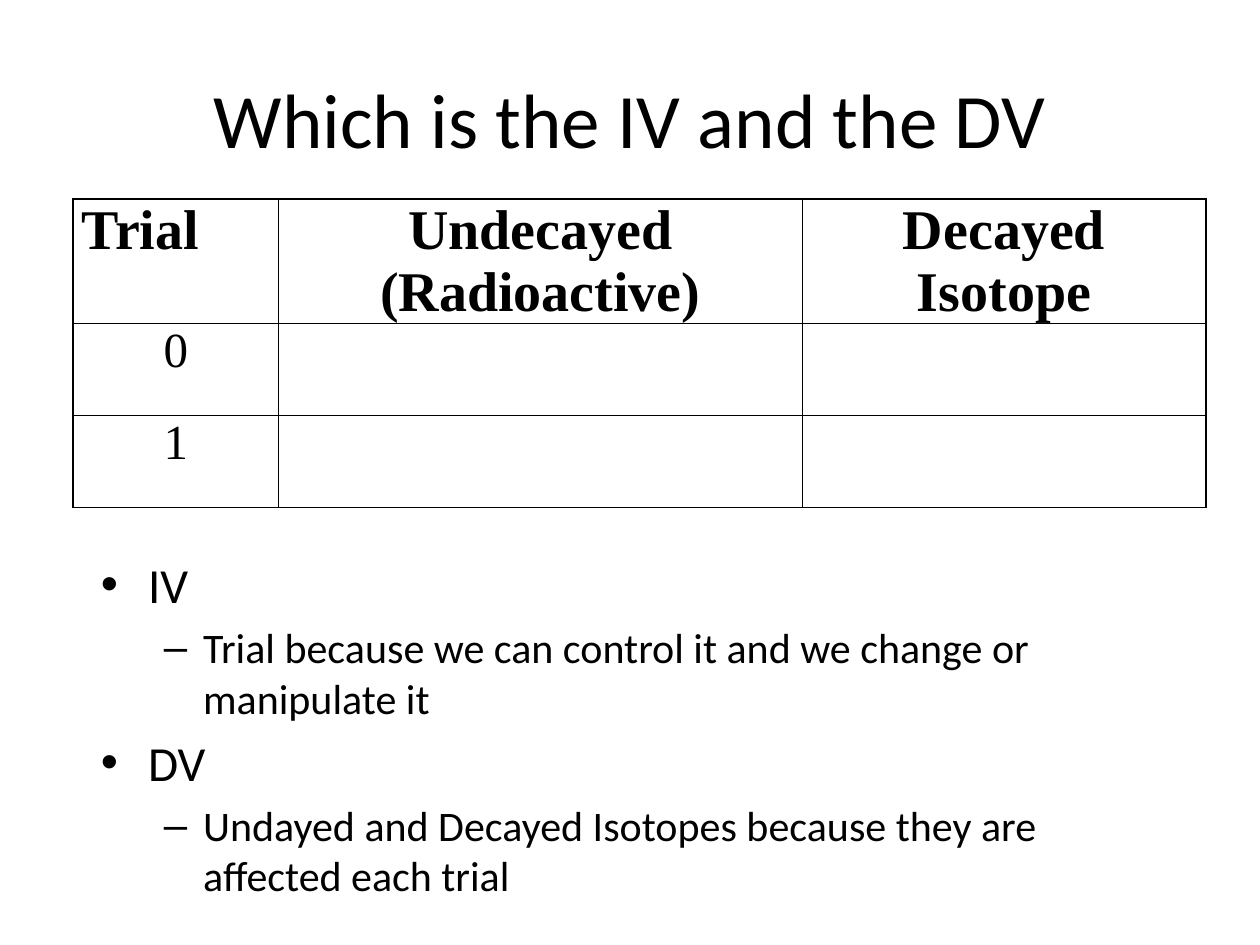
from dataclasses import dataclass

from lxml import etree
from pptx import Presentation
from pptx.dml.color import RGBColor
from pptx.enum.text import MSO_ANCHOR, MSO_AUTO_SIZE, PP_ALIGN
from pptx.oxml.ns import qn
from pptx.util import Inches, Pt

LEFT, CENTER = PP_ALIGN.LEFT, PP_ALIGN.CENTER
MIDDLE, TOP = MSO_ANCHOR.MIDDLE, MSO_ANCHOR.TOP
FIXED = MSO_AUTO_SIZE.NONE


@dataclass(frozen=True)
class Theme:
    ink: str = "000000"
    sans: str = "Calibri"
    serif: str = "Times New Roman"
    title: int = 44
    head: int = 32
    item: int = 28
    sub: int = 24
    line: int = 1


THEME = Theme()
WIDE, HIGH = Inches(10), Inches(7.5)
COLS = (1.63, 4.16, 3.2)
ROWS = (0.79, 0.73, 0.73)
CELLS = (
    ("Trial", "Undecayed (Radioactive)", "Decayed Isotope"),
    ("0", "", ""),
    ("1", "", ""),
)
LIST = (
    (0, "IV"),
    (1, "Trial because we can control it and we change or manipulate it"),
    (0, "DV"),
    (1, "Undayed and Decayed Isotopes because they are affected each trial"),
)


def write(para, text, size, face=THEME.sans, bold=False, align=LEFT, level=0):
    para.level = level
    para.alignment = align
    run = para.add_run()
    run.text = text
    font = run.font
    font.name, font.size, font.bold = face, Pt(size), bold
    font.color.rgb = RGBColor.from_string(THEME.ink)


def place(shape, left, top, width, height):
    shape.left, shape.top = int(WIDE * left), int(HIGH * top)
    shape.width, shape.height = int(WIDE * width), int(HIGH * height)


def add_title(slide, text):
    title = slide.shapes.title
    place(title, 0.05, 0.04, 0.9, 0.17)
    title.text_frame.vertical_anchor = MIDDLE
    write(title.text_frame.paragraphs[0], text, THEME.title, align=CENTER)


def add_list(slide, items):
    body = slide.placeholders[1]
    place(body, 0.07, 0.58, 0.88, 0.4)
    frame = body.text_frame
    frame.auto_size = FIXED
    frame.vertical_anchor = TOP
    for n, (level, text) in enumerate(items):
        para = frame.add_paragraph() if n else frame.paragraphs[0]
        write(para, text, THEME.sub if level else THEME.item, level=level)


def frame_cell(cell):
    props = cell._tc.get_or_add_tcPr()
    for side in "LRTB":
        line = etree.SubElement(props, qn(f"a:ln{side}"), w=str(Pt(THEME.line)))
        fill = etree.SubElement(line, qn("a:solidFill"))
        etree.SubElement(fill, qn("a:srgbClr"), val=THEME.ink)
    cell.fill.background()
    cell.margin_left = cell.margin_right = Inches(0.07)
    cell.margin_top = cell.margin_bottom = 0


def add_grid(slide, rows):
    grid = slide.shapes.add_table(
        len(ROWS), len(COLS), Inches(0.58), Inches(1.58),
        Inches(sum(COLS)), Inches(sum(ROWS)),
    ).table
    grid.horz_banding = False
    for col, width in zip(grid.columns, COLS):
        col.width = Inches(width)
    for r, (row, height) in enumerate(zip(grid.rows, ROWS)):
        row.height = Inches(height)
        for c, cell in enumerate(row.cells):
            frame_cell(cell)
            if rows[r][c]:
                write(
                    cell.text_frame.paragraphs[0], rows[r][c],
                    THEME.item if r else THEME.head, face=THEME.serif,
                    bold=r == 0, align=CENTER if r or c else LEFT,
                )


def main():
    deck = Presentation()
    deck.slide_width, deck.slide_height = WIDE, HIGH
    slide = deck.slides.add_slide(deck.slide_layouts[1])
    add_title(slide, "Which is the IV and the DV")
    add_grid(slide, CELLS)
    add_list(slide, LIST)
    deck.save("out.pptx")


if __name__ == "__main__":
    main()
